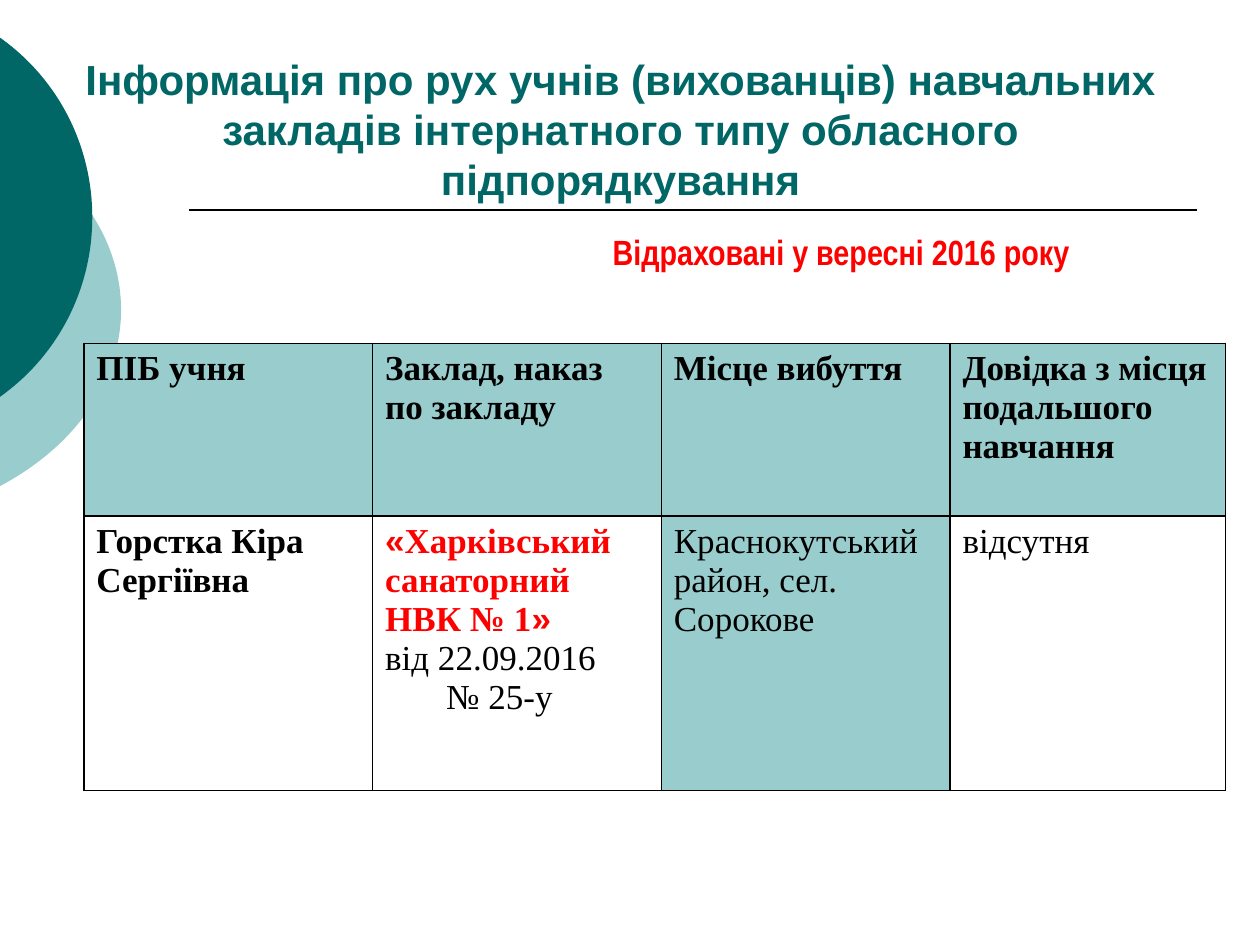
from dataclasses import dataclass

from lxml import etree
from pptx import Presentation
from pptx import util as u
from pptx.dml.color import RGBColor
from pptx.enum import shapes, text
from pptx.oxml import ns


@dataclass(frozen=True)
class Theme:
    dark: RGBColor = RGBColor(0x00, 0x66, 0x66)
    light: RGBColor = RGBColor(0x99, 0xCC, 0xCC)
    accent: RGBColor = RGBColor(0xFF, 0x00, 0x00)
    ink: RGBColor = RGBColor(0x00, 0x00, 0x00)
    title_size: u.Pt = u.Pt(24)
    body_size: u.Pt = u.Pt(20)
    line_width: u.Pt = u.Pt(1)
    title_font: str = "Arial"
    caption_font: str = "Arial Narrow"
    table_font: str = "Times New Roman"


THEME = Theme()

HEADINGS = ["ПІБ учня", "Заклад, наказ по закладу", "Місце вибуття",
            "Довідка з місця подальшого навчання"]
PUPIL = ["Горстка Кіра Сергіївна", None, "Краснокутський район, сел. Сорокове", "відсутня"]
SCHOOL = [("«", THEME.title_font), ("Харківський санаторний НВК № 1", THEME.table_font),
          ("»", THEME.title_font)]
ORDER = [("від 22.09.2016", 0), ("№ 25-у", 1.23)]


def style(font, name, size, color, bold=False):
    font.name, font.size, font.bold = name, size, bold
    font.color.rgb = color


def add_disc_edge(slide, left, top, width, height, edge_top, edge_height, color):
    bulge, half = left + width, edge_height / 2
    middle, edge_bottom = edge_top + half, edge_top + edge_height
    builder = slide.shapes.build_freeform(u.Cm(left), u.Cm(top))
    builder.add_line_segments([(u.Cm(left + width), u.Cm(top + height))])
    disc = builder.convert_to_shape()
    disc.shadow.inherit = False
    disc.fill.solid()
    disc.fill.fore_color.rgb = color
    disc.line.fill.background()

    outline = disc._element.find(f".//{ns.qn('a:pathLst')}")[0]
    for step in list(outline):
        outline.remove(step)
    shoulder, rise, reach = 0.63 * bulge, 0.23 * half, 0.4 * half
    commands = [
        ("moveTo", [(0, edge_top)]),
        ("cubicBezTo", [(shoulder, edge_top + rise), (bulge, middle - reach), (bulge, middle)]),
        ("cubicBezTo", [(bulge, middle + reach), (shoulder, edge_bottom - rise),
                        (0, edge_bottom)]),
        ("close", []),
    ]
    for command, points in commands:
        step = etree.SubElement(outline, ns.qn(f"a:{command}"))
        for x, y in points:
            etree.SubElement(step, ns.qn("a:pt"),
                             x=str(u.Cm(x - left)), y=str(u.Cm(y - top)))


def add_decoration(slide):
    add_disc_edge(slide, -8.99, 1.91, 11.43, 8.69, 2.69, 7.11, THEME.light)
    add_disc_edge(slide, -6.73, 0, 8.59, 8.76, 0.76, 7.24, THEME.dark)
    rule = slide.shapes.add_connector(shapes.MSO_CONNECTOR.STRAIGHT,
                                      u.Cm(3.81), u.Cm(4.24), u.Cm(24.13), u.Cm(4.24))
    rule.line.color.rgb = THEME.ink
    rule.line.width = THEME.line_width
    etree.SubElement(rule._element.spPr, ns.qn("a:effectLst"))


def place_title(slide, left, top, width, height):
    title = slide.shapes.title
    title.left, title.top, title.width, title.height = map(u.Cm, (left, top, width, height))
    frame = title.text_frame
    frame.text = ("Інформація про рух учнів (вихованців) навчальних закладів "
                  "інтернатного типу обласного підпорядкування")
    frame.auto_size = text.MSO_AUTO_SIZE.NONE
    frame.word_wrap = True
    frame.vertical_anchor = text.MSO_ANCHOR.BOTTOM
    frame.margin_left = frame.margin_right = frame.margin_bottom = 0
    heading = frame.paragraphs[0]
    heading.alignment = text.PP_ALIGN.CENTER
    style(heading.font, THEME.title_font, THEME.title_size, THEME.dark, True)


def add_caption(slide, left, top, width, height):
    caption = slide.shapes.add_textbox(*map(u.Cm, (left, top, width, height)))
    caption.text_frame.word_wrap = True
    period = caption.text_frame.paragraphs[0]
    period.text = "Відраховані у вересні 2016 року"
    style(period.font, THEME.caption_font, THEME.body_size, THEME.accent, True)


def add_borders(cell):
    properties = cell._tc.get_or_add_tcPr()
    for position, side in enumerate("LRTB"):
        border = etree.Element(ns.qn(f"a:ln{side}"), w=str(THEME.line_width))
        fill = etree.SubElement(border, ns.qn("a:solidFill"))
        etree.SubElement(fill, ns.qn("a:srgbClr"), val=str(THEME.ink))
        properties.insert(position, border)


def fill_order_cell(cell):
    school = cell.text_frame.paragraphs[0]
    style(school.font, THEME.table_font, THEME.body_size, THEME.accent, True)
    for part, font_name in SCHOOL:
        run = school.add_run()
        run.text = part
        run.font.name = font_name
    for words, indent in ORDER:
        order = cell.text_frame.add_paragraph()
        order.text = words
        order._p.get_or_add_pPr().set("marL", str(u.Cm(indent)))
        style(order.font, THEME.table_font, THEME.body_size, THEME.ink)


def add_pupil_table(slide, left, top, width, height):
    table = slide.shapes.add_table(2, 4, *map(u.Cm, (left, top, width, height))).table
    wide, heading_height = 5.82, 3.48
    for column, size in zip(table.columns, [wide] * 3 + [width - 3 * wide]):
        column.width = u.Cm(size)
    for row, size in zip(table.rows, [heading_height, height - heading_height]):
        row.height = u.Cm(size)
    for r, row in enumerate([HEADINGS, PUPIL]):
        for c, words in enumerate(row):
            cell = table.cell(r, c)
            if r == 0 or c == 2:
                cell.fill.solid()
                cell.fill.fore_color.rgb = THEME.light
            else:
                cell.fill.background()
            add_borders(cell)
            if words is None:
                fill_order_cell(cell)
            else:
                cell.text = words
                style(cell.text_frame.paragraphs[0].font, THEME.table_font,
                      THEME.body_size, THEME.ink, r == 0 or c == 0)


def main():
    deck = Presentation()
    deck.slide_width, deck.slide_height = u.Cm(25.4), u.Cm(19.05)
    slide = deck.slides.add_slide(deck.slide_layouts[5])
    add_decoration(slide)
    place_title(slide, 0.89, 0.92, 23.24, 3.2)
    add_caption(slide, 12.1, 4.52, 12.01, 1.09)
    add_pupil_table(slide, 1.69, 6.92, 23.01, 9.02)
    deck.save("out.pptx")


if __name__ == "__main__":
    main()
